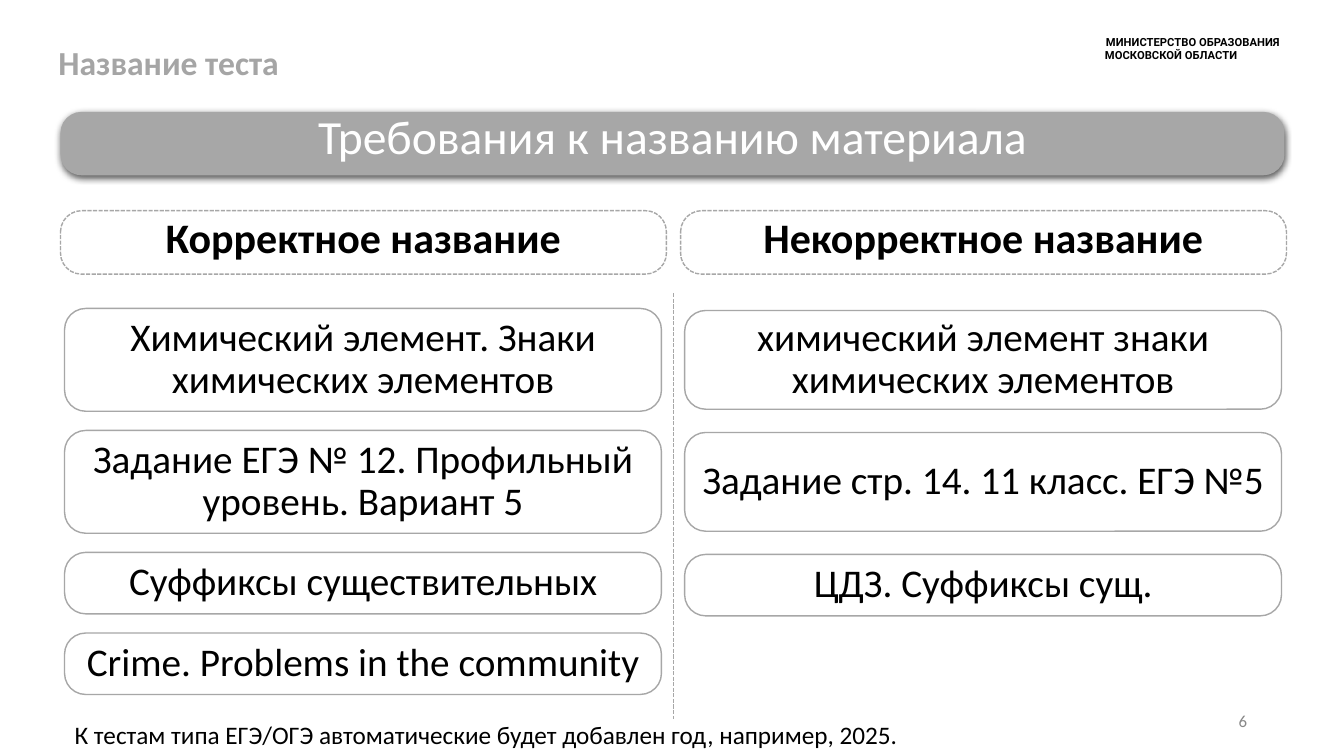
from lxml.etree import SubElement
from pptx import Presentation
from pptx.dml.color import RGBColor
from pptx.enum.dml import MSO_LINE
from pptx.enum.shapes import MSO_CONNECTOR, MSO_SHAPE
from pptx.enum.text import MSO_ANCHOR, MSO_AUTO_SIZE, PP_ALIGN
from pptx.oxml.ns import qn
from pptx.util import Pt

EMU_PER_PX = 9144  # 100 px to the inch
COLORS = {"white": "FFFFFF", "black": "000000", "bar": "A7A7A7",
          "title": "A5A5A5", "number": "888888"}
CORNER_RADIUS = 21


def px(length):
    return length * EMU_PER_PX


def rgb(name):
    return RGBColor.from_string(COLORS[name])


class SlideBuilder:
    def __init__(self, deck):
        self.font = "Calibri"
        self.padding = 5
        self.slide = deck.slides.add_slide(deck.slide_layouts[5])

    def set_text(self, shape, text, size, color="black", bold=False, font=None,
                 align=PP_ALIGN.LEFT, anchor=MSO_ANCHOR.TOP, spacing=1.0,
                 wrap=True, padding=None):
        frame = shape.text_frame
        frame.auto_size = MSO_AUTO_SIZE.NONE
        frame.word_wrap = wrap
        frame.vertical_anchor = anchor
        inset = px(self.padding if padding is None else padding)
        frame.margin_left = frame.margin_right = inset
        frame.margin_top = frame.margin_bottom = inset
        para = frame.paragraphs[0]
        para.alignment = align
        para.line_spacing = spacing
        para.space_before = Pt(0)
        span = para.add_run()
        span.text = text
        span.font.name = font or self.font
        span.font.size = Pt(size)
        span.font.bold = bold
        span.font.color.rgb = rgb(color)
        return para

    def title(self, text, left, top, width, height, **style):
        box = self.slide.shapes.title
        box.left, box.top = px(left), px(top)
        box.width, box.height = px(width), px(height)
        self.set_text(box, text, padding=0, **style)

    def label(self, text, left, top, width, height, **style):
        box = self.slide.shapes.add_textbox(px(left), px(top), px(width), px(height))
        return self.set_text(box, text, **style)

    def rounded_box(self, text, left, top, width, height, fill=None, line="bar",
                    dashed=False, **style):
        box = self.slide.shapes.add_shape(
            MSO_SHAPE.ROUNDED_RECTANGLE, px(left), px(top), px(width), px(height))
        box.shadow.inherit = False
        box.adjustments[0] = CORNER_RADIUS / height
        if fill:
            box.fill.solid()
            box.fill.fore_color.rgb = rgb(fill)
        else:
            box.fill.background()
        if line:
            self.outline(box.line, line, dashed)
        else:
            box.line.fill.background()
        self.set_text(box, text, align=PP_ALIGN.CENTER, **style)
        return box

    def outline(self, line, color, dashed):
        line.color.rgb = rgb(color)
        line.width = Pt(1)
        if dashed:
            line.dash_style = MSO_LINE.SQUARE_DOT

    def drop_shadow(self, box):
        effects = box._element.spPr.find(qn("a:effectLst"))
        shadow = SubElement(effects, qn("a:outerShdw"), blurRad=str(Pt(5)),
                            dist=str(Pt(1.5)), dir="5400000", rotWithShape="0")
        color = SubElement(shadow, qn("a:srgbClr"), val=COLORS["black"])
        SubElement(color, qn("a:alpha"), val="63000")

    def divider(self, x, top, bottom):
        line = self.slide.shapes.add_connector(
            MSO_CONNECTOR.STRAIGHT, px(x), px(top), px(x), px(bottom))
        self.outline(line.line, "bar", dashed=True)
        SubElement(line._element.spPr, qn("a:effectLst"))

    def column(self, left, heading, top, gap, examples):
        """Draw a heading and, below it, (text, height) boxes at equal gaps."""
        self.rounded_box(heading, left, 209, 601, 63, fill="white", dashed=True,
                         size=30, bold=True, spacing=0.9, anchor=MSO_ANCHOR.BOTTOM)
        for text, height in examples:
            self.rounded_box(text, left + 4, top, 592, height, size=28,
                             spacing=0.9, anchor=MSO_ANCHOR.MIDDLE)
            top += height + gap


def main():
    deck = Presentation()
    deck.slide_width, deck.slide_height = px(1333), px(750)
    page = SlideBuilder(deck)

    page.title("Название теста", 58, 42, 961, 33, size=24, color="title", bold=True)
    ministry = page.label("МИНИСТЕРСТВО ОБРАЗОВАНИЯ МОСКОВСКОЙ ОБЛАСТИ",
                          1091, 30, 223, 38, size=8, bold=True, font="Roboto")
    ministry._p.get_or_add_pPr().set("indent", str(px(1)))

    banner = page.rounded_box("Требования к названию материала", 60, 111, 1214, 63,
                              fill="bar", line=None, size=34, color="white",
                              anchor=MSO_ANCHOR.BOTTOM)
    page.drop_shadow(banner)

    page.column(60, "Корректное название", top=306, gap=19, examples=[
        ("Химический элемент. Знаки химических элементов", 102),
        ("Задание ЕГЭ № 12. Профильный уровень. Вариант 5", 102),
        ("Суффиксы существительных", 61),
        ("Crime. Problems in the community", 61),
    ])
    page.column(675, "Некорректное название", top=308, gap=23, examples=[
        ("химический элемент знаки химических элементов", 98),
        ("Задание стр. 14. 11 класс. ЕГЭ №5", 98),
        ("ЦДЗ. Суффиксы сущ.", 61),
    ])
    page.divider(668, 291, 713)

    page.label("6", 1222, 702, 20, 27, size=12, color="number", wrap=False,
               align=PP_ALIGN.RIGHT, anchor=MSO_ANCHOR.MIDDLE)
    page.label("К тестам типа ЕГЭ/ОГЭ автоматические будет добавлен год, "
               "например, 2025.", 69, 709, 833, 36, size=18, wrap=False)
    deck.save("out.pptx")


if __name__ == "__main__":
    main()
